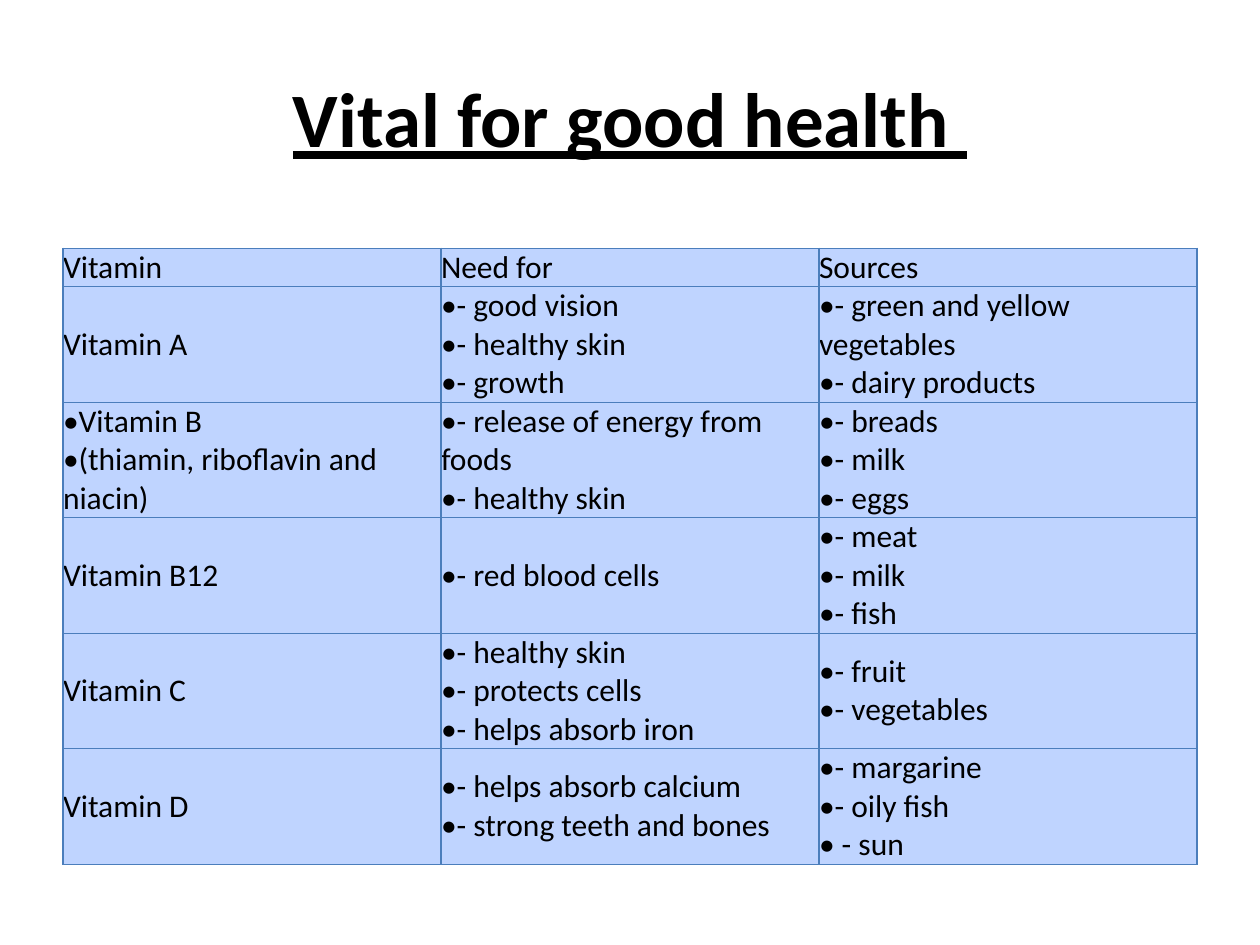
from lxml import etree
from pptx import Presentation
from pptx.dml.color import RGBColor
from pptx.enum.text import MSO_ANCHOR, PP_ALIGN
from pptx.oxml.ns import qn
from pptx.util import Inches, Pt

MIDDLE = MSO_ANCHOR.MIDDLE
CENTER = PP_ALIGN.CENTER
COLORS = {"text": "000000", "cell": "BFD4FF", "border": "4B7EBC"}
BLANK_LAYOUT = 6
LINE_POINTS = 22

VITAMINS = [
    ["Vitamin", "Need for", "Sources"],
    ["Vitamin A",
     ("- good vision", "- healthy skin", "- growth"),
     ("- green and yellow vegetables", "- dairy products")],
    [("Vitamin B", "(thiamin, riboflavin and niacin)"),
     ("- release of energy from foods", "- healthy skin"),
     ("- breads", "- milk", "- eggs")],
    ["Vitamin B12",
     ("- red blood cells",),
     ("- meat", "- milk", "- fish")],
    ["Vitamin C",
     ("- healthy skin", "- protects cells", "- helps absorb iron"),
     ("- fruit", "- vegetables")],
    ["Vitamin D",
     ("- helps absorb calcium", "- strong teeth and bones"),
     ("- margarine", "- oily fish", " - sun")],
]
ROW_LINES = [1, 3, 3, 3, 3, 3]


class SlideBuilder:
    font_name = "Calibri"

    def __init__(self, presentation):
        self.width = presentation.slide_width
        self.height = presentation.slide_height
        layout = presentation.slide_layouts[BLANK_LAYOUT]
        self.slide = presentation.slides.add_slide(layout)

    def box(self, left, top, width, height):
        return (round(left * self.width), round(top * self.height),
                round(width * self.width), round(height * self.height))

    def style(self, paragraph, size, emphasis=None):
        font = paragraph.font
        font.name = self.font_name
        font.size = Pt(size)
        font.bold = emphasis
        font.underline = emphasis
        font.color.rgb = RGBColor.from_string(COLORS["text"])

    def title(self, text, left, top, width, height):
        shape = self.slide.shapes.add_textbox(*self.box(left, top, width, height))
        frame = shape.text_frame
        frame.word_wrap = True
        frame.vertical_anchor = MIDDLE
        paragraph = frame.paragraphs[0]
        paragraph.text = text
        paragraph.alignment = CENTER
        self.style(paragraph, 44, emphasis=True)

    def table(self, rows, row_lines, left, top, width):
        height = Pt(LINE_POINTS * sum(row_lines)) / self.height
        table = self.slide.shapes.add_table(
            len(rows), len(rows[0]), *self.box(left, top, width, height)).table
        table.first_row = False
        table.horz_banding = False
        for row, values, lines in zip(table.rows, rows, row_lines):
            row.height = Pt(LINE_POINTS * lines)
            for cell, content in zip(row.cells, values):
                self.cell(cell, content)

    def cell(self, cell, content):
        bulleted = isinstance(content, tuple)
        cell.margin_left = cell.margin_right = 0
        cell.margin_top = cell.margin_bottom = 0
        cell.vertical_anchor = MIDDLE
        cell.fill.solid()
        cell.fill.fore_color.rgb = RGBColor.from_string(COLORS["cell"])
        self.borders(cell)
        cell.text = "\n".join(content) if bulleted else content
        for paragraph in cell.text_frame.paragraphs:
            self.style(paragraph, 18)
            if bulleted:
                self.bullet(paragraph)

    def bullet(self, paragraph):
        properties = paragraph._p.get_or_add_pPr()
        properties.insert(0, etree.Element(qn("a:buFont"), typeface=self.font_name))
        properties.insert(1, etree.Element(qn("a:buChar"), char="•"))

    def borders(self, cell):
        properties = cell._tc.get_or_add_tcPr()
        for position, side in enumerate(("lnL", "lnR", "lnT", "lnB")):
            line = etree.Element(qn(f"a:{side}"), w=str(Pt(0.75)))
            fill = etree.SubElement(line, qn("a:solidFill"))
            etree.SubElement(fill, qn("a:srgbClr"), val=COLORS["border"])
            properties.insert(position, line)


def main():
    presentation = Presentation()
    presentation.slide_width = Inches(10)
    presentation.slide_height = Inches(7.5)
    builder = SlideBuilder(presentation)
    builder.title("Vital for good health ", 0.05, 0.04, 0.9, 1 / 6)
    builder.table(VITAMINS, ROW_LINES, 0.05, 1.97 / 7.5, 0.9)
    presentation.save("out.pptx")


if __name__ == "__main__":
    main()
